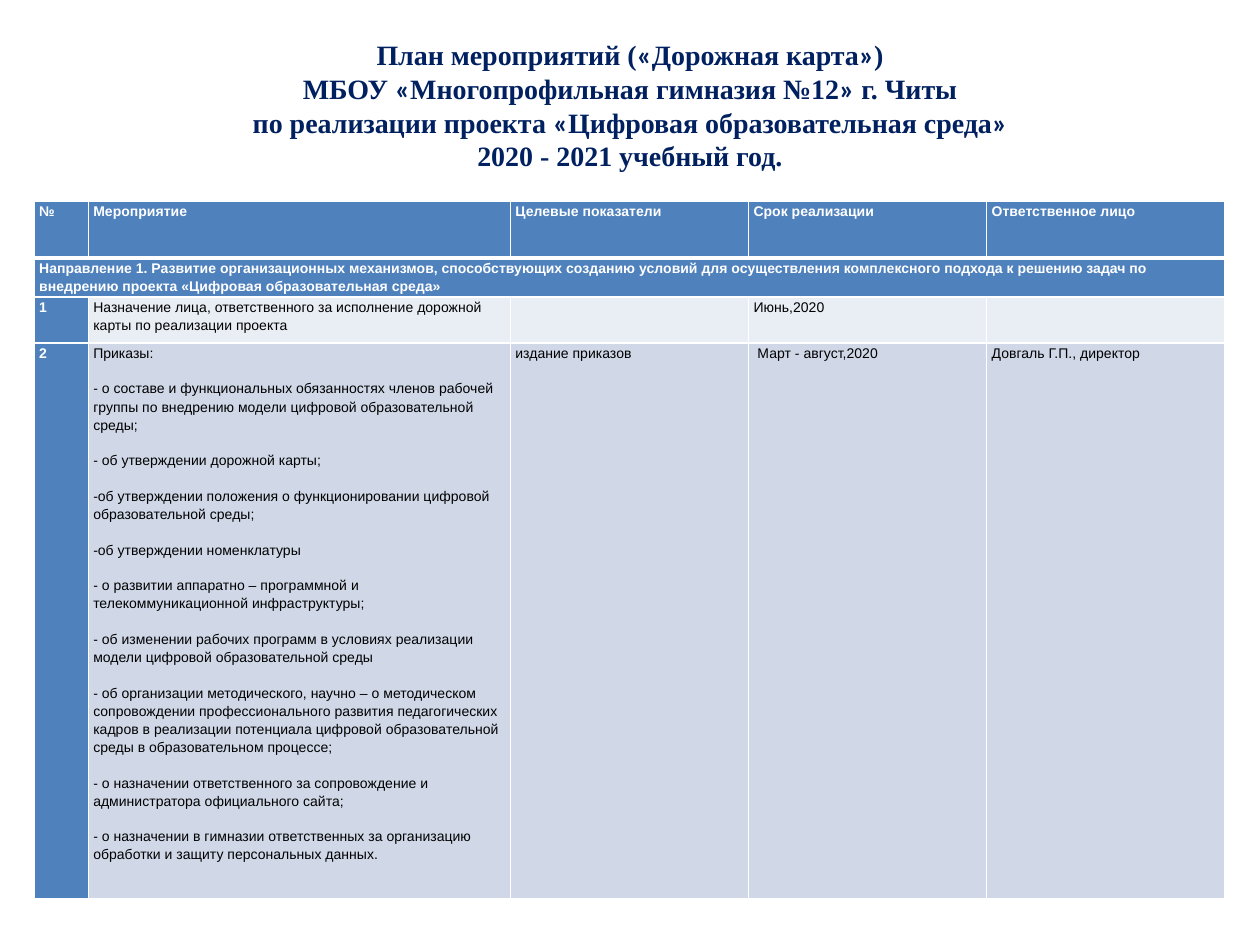
"""Build the school's digital environment road map slide."""
from itertools import groupby

from lxml.etree import SubElement
from pptx import Presentation
from pptx.dml.color import RGBColor
from pptx.enum.text import MSO_ANCHOR, PP_ALIGN
from pptx.oxml.ns import qn
from pptx.util import Cm, Pt

COLORS = {
    "title": "002060",
    "header": "4F81BD",
    "light": "E9EDF4",
    "dark": "D0D8E8",
    "white": "FFFFFF",
    "text": "000000",
}

TITLE_LINES = [
    "План мероприятий («Дорожная карта»)",
    "МБОУ «Многопрофильная гимназия №12» г. Читы",
    "по реализации проекта «Цифровая образовательная среда»",
    "2020 - 2021 учебный год.",
]

ORDERS = [
    "Приказы:",
    "- о составе и функциональных обязанностях членов рабочей группы "
    "по внедрению модели цифровой образовательной среды;",
    "- об утверждении дорожной карты;",
    "-об утверждении положения о функционировании цифровой образовательной среды;",
    "-об утверждении номенклатуры",
    "- о развитии аппаратно – программной и телекоммуникационной инфраструктуры;",
    "- об изменении рабочих программ в условиях реализации "
    "модели цифровой образовательной среды",
    "- об организации методического, научно – о методическом сопровождении "
    "профессионального развития педагогических кадров в реализации потенциала "
    "цифровой образовательной среды в образовательном процессе;",
    "- о назначении ответственного за сопровождение и "
    "администратора официального сайта;",
    "- о назначении в гимназии ответственных за организацию "
    "обработки и защиту персональных данных.",
]

DIRECTION = (
    "Направление 1. Развитие организационных механизмов, способствующих созданию "
    "условий для осуществления комплексного подхода к решению задач по внедрению "
    "проекта «Цифровая образовательная среда»"
)

ROWS = [
    ["№", "Мероприятие", "Целевые показатели", "Срок реализации", "Ответственное лицо"],
    [DIRECTION, "", "", "", ""],
    ["1", "Назначение лица, ответственного за исполнение дорожной карты "
     "по реализации проекта", "", "Июнь,2020", ""],
    ["2", "\n".join(ORDERS), "издание приказов", "Март - август,2020",
     "Довгаль Г.П., директор"],
]
ROW_HEIGHTS = [1.14, 0.79, 0.93, 11.2]
ROW_FILLS = ["header", "header", "light", "dark"]
COLUMN_WIDTHS = [1.09, 8.51, 4.8, 4.8, 4.8]


def color(name):
    return RGBColor.from_string(COLORS[name])


def add_border(cell, side, width):
    line = SubElement(cell._tc.get_or_add_tcPr(), qn(f"a:ln{side}"), w=str(Pt(width)))
    fill = SubElement(line, qn("a:solidFill"))
    SubElement(fill, qn("a:srgbClr"), val=COLORS["white"])


deck = Presentation()
deck.slide_width, deck.slide_height = Cm(25.4), Cm(19.05)
page = deck.slides.add_slide(deck.slide_layouts[6])

title_box = page.shapes.add_textbox(Cm(1.27), Cm(0.91), Cm(22.86), Cm(3.02))
frame = title_box.text_frame
frame.word_wrap = True
frame.vertical_anchor = MSO_ANCHOR.MIDDLE
frame.margin_top, frame.margin_bottom = Cm(0), Cm(0.6)
for index, line_text in enumerate(TITLE_LINES):
    para = frame.paragraphs[0] if index == 0 else frame.add_paragraph()
    para.alignment = PP_ALIGN.CENTER
    para.font.size = Pt(16)
    para.font.bold = True
    para.font.color.rgb = color("title")
    for is_quote, letters in groupby(line_text, lambda letter: letter in "«»"):
        span = para.add_run()
        span.text = "".join(letters)
        span.font.name = "Calibri" if is_quote else "Times New Roman"

table = page.shapes.add_table(
    len(ROWS), len(COLUMN_WIDTHS), Cm(0.69), Cm(4.06),
    Cm(sum(COLUMN_WIDTHS)), Cm(sum(ROW_HEIGHTS))).table
table.first_row = table.horz_banding = False
for column, width in zip(table.columns, COLUMN_WIDTHS):
    column.width = Cm(width)

for row_index, row_texts in enumerate(ROWS):
    table.rows[row_index].height = Cm(ROW_HEIGHTS[row_index])
    for column_index, cell_text in enumerate(row_texts):
        cell = table.cell(row_index, column_index)
        is_header = row_index < 2 or column_index == 0
        for side in "LRTB":
            touches_rule = (row_index, side) in [(0, "B"), (1, "T")]
            add_border(cell, side, 3 if touches_rule else 1)
        cell.fill.solid()
        cell.fill.fore_color.rgb = color("header" if is_header else ROW_FILLS[row_index])
        cell.margin_left = cell.margin_right = Cm(0.1)
        cell.margin_top = cell.margin_bottom = Cm(0)
        cell.text = cell_text
        for para in cell.text_frame.paragraphs:
            para.line_spacing = 1.15
            para.space_after = Pt(10)
            para.font.name = "Arial"
            para.font.size = Pt(8)
            para.font.bold = is_header
            para.font.color.rgb = color("white" if is_header else "text")

table.cell(3, 3).margin_left = Cm(0.18)
table.cell(1, 0).merge(table.cell(1, 4))

deck.save("out.pptx")
